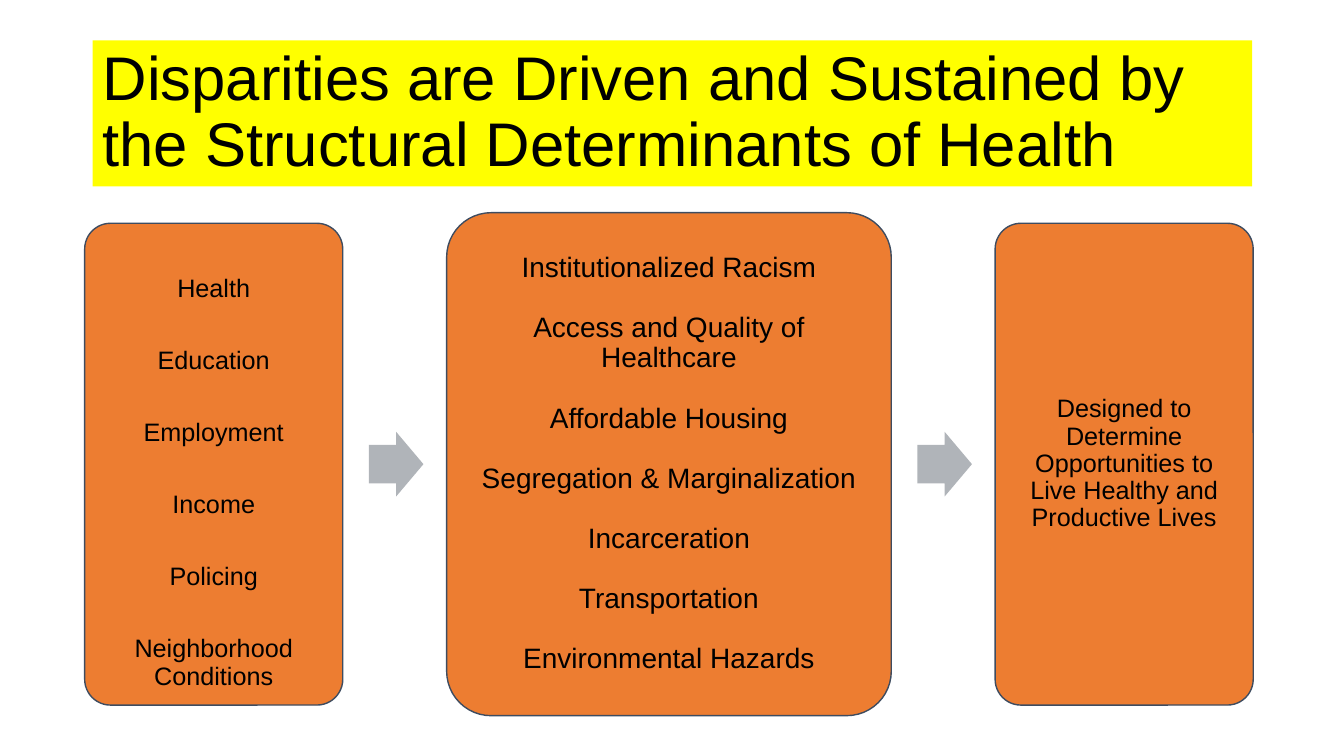
from dataclasses import dataclass
from pptx import Presentation
from pptx.dml.color import RGBColor
from pptx.enum.shapes import MSO_SHAPE
from pptx.enum.text import MSO_ANCHOR, PP_ALIGN
from pptx.util import Inches, Pt


@dataclass(frozen=True)
class Theme:
    font: str = "Arial"
    text: str = "000000"
    title_fill: str = "FFFF00"
    panel_fill: str = "ED7D31"
    panel_line: str = "3E4C60"
    arrow_fill: str = "B0B4B9"
    title_size: int = 44
    main_size: int = 20
    side_size: int = 18


THEME = Theme()

TITLE = "Disparities are Driven and Sustained by \vthe Structural Determinants of Health"
SYSTEMS = ["Health", "Education", "Employment", "Income", "Policing",
           "Neighborhood Conditions"]
DRIVERS = ["Institutionalized Racism", "Access and Quality of Healthcare",
           "Affordable Housing", "Segregation & Marginalization",
           "Incarceration", "Transportation", "Environmental Hazards"]
OUTCOME = ["Designed to Determine Opportunities to Live Healthy and Productive Lives"]

# Panels: width, height, lines, size, gap in points, inset, anchor
PANELS = [
    (2.56, 4.78, SYSTEMS, THEME.side_size, 32, 0.07, MSO_ANCHOR.BOTTOM),
    (4.41, 4.99, DRIVERS, THEME.main_size, 21.4, 0.08, MSO_ANCHOR.MIDDLE),
    (2.56, 4.78, OUTCOME, THEME.side_size, 0, 0.07, MSO_ANCHOR.MIDDLE),
]
PANEL_GAP = 1.03
ARROW_OFFSET, ARROW_W, ARROW_H = 0.26, 0.54, 0.64


def add_box(s, kind, x, y, w, h, fill, line=None):
    sp = s.shapes.add_shape(kind, Inches(x), Inches(y), Inches(w), Inches(h))
    sp.shadow.inherit = False
    sp.fill.solid()
    sp.fill.fore_color.rgb = RGBColor.from_string(fill)
    if line:
        sp.line.color.rgb = RGBColor.from_string(line)
        sp.line.width = Pt(1)
    else:
        sp.line.fill.background()
    return sp


def write(sp, lines, size, align=PP_ALIGN.CENTER, gap=0, inset=(0.1, 0.05),
          anchor=MSO_ANCHOR.MIDDLE):
    tf = sp.text_frame
    tf.word_wrap = True
    tf.vertical_anchor = anchor
    tf.margin_left = tf.margin_right = Inches(inset[0])
    tf.margin_top = tf.margin_bottom = Inches(inset[1])
    for i, line in enumerate(lines):
        p = tf.paragraphs[0] if i == 0 else tf.add_paragraph()
        p.text = line
        p.alignment = align
        p.line_spacing = 0.9
        p.space_before = Pt(gap if i else 0)
        p.font.name = THEME.font
        p.font.size = Pt(size)
        p.font.color.rgb = RGBColor.from_string(THEME.text)


def add_title(s, x, y, w, h):
    sp = add_box(s, MSO_SHAPE.RECTANGLE, x, y, w, h, THEME.title_fill)
    write(sp, [TITLE], THEME.title_size, align=PP_ALIGN.LEFT)


def add_flow(s, x, y, h):
    """Row of panels centred on one axis, with an arrow in each gap."""
    middle = y + h / 2
    for i, (pw, ph, lines, size, gap, inset, anchor) in enumerate(PANELS):
        if i:
            arrow = add_box(s, MSO_SHAPE.RIGHT_ARROW, x - PANEL_GAP + ARROW_OFFSET,
                            middle - ARROW_H / 2, ARROW_W, ARROW_H, THEME.arrow_fill)
            arrow.adjustments[0] = 0.6
            arrow.adjustments[1] = 0.5
        panel = add_box(s, MSO_SHAPE.ROUNDED_RECTANGLE, x, middle - ph / 2, pw, ph,
                        THEME.panel_fill, THEME.panel_line)
        panel.adjustments[0] = 0.1
        write(panel, lines, size, gap=gap, inset=(inset, inset), anchor=anchor)
        x += pw + PANEL_GAP


def main():
    prs = Presentation()
    prs.slide_width, prs.slide_height = Inches(13.33), Inches(7.5)
    s = prs.slides.add_slide(prs.slide_layouts[6])
    add_title(s, 0.92, 0.4, 11.5, 1.45)
    add_flow(s, 0.84, 2.11, 4.99)
    prs.save("out.pptx")


if __name__ == "__main__":
    main()
